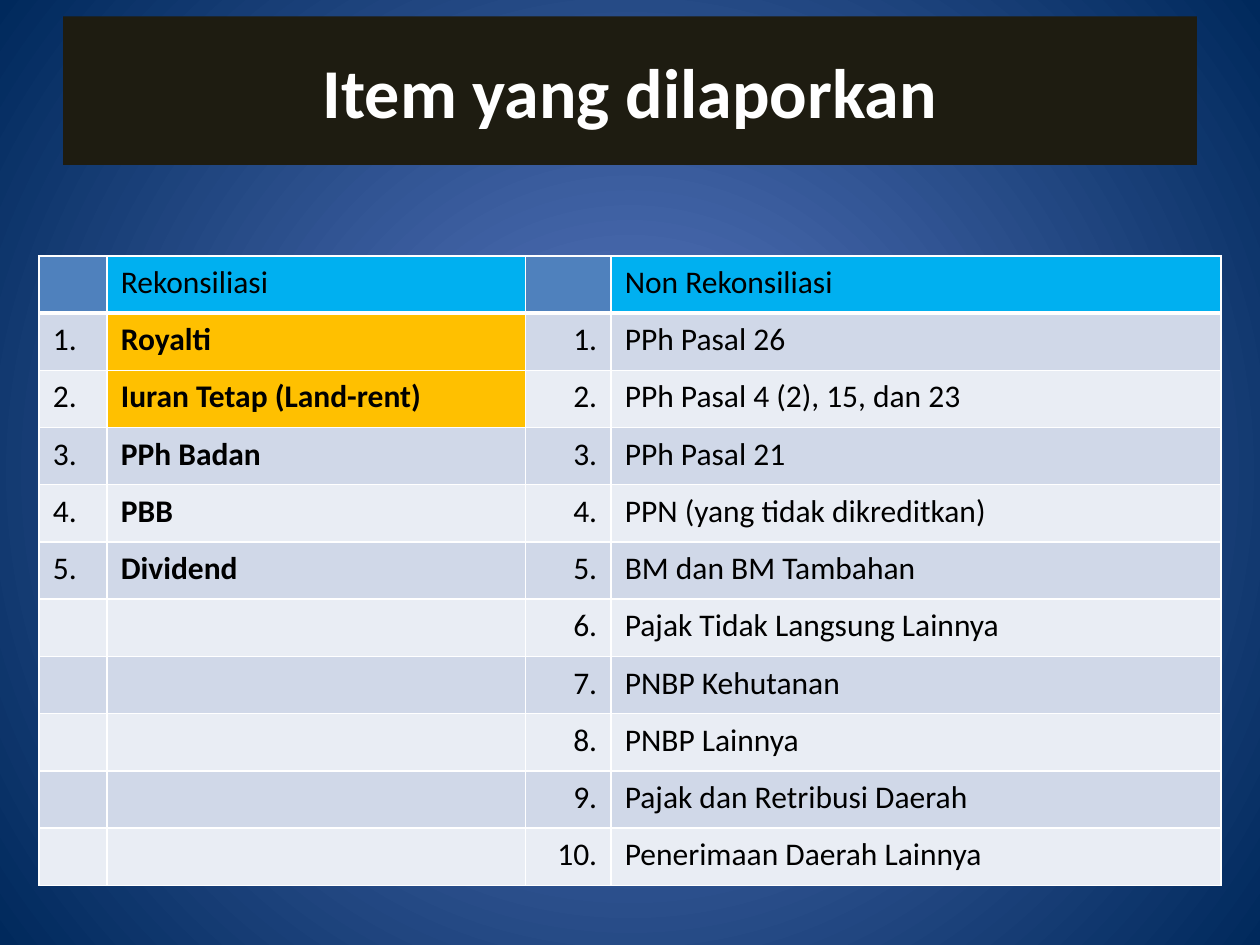
"""Build a slide that lists reconciled and unreconciled report items."""
import pptx
import pptx.dml.color
import pptx.enum.text
import pptx.oxml
import pptx.oxml.ns
import pptx.util
from pptx.util import Inches

RGBColor = pptx.dml.color.RGBColor
ALIGN = pptx.enum.text.PP_ALIGN
WHITE = RGBColor(0xFF, 0xFF, 0xFF)
BLACK = RGBColor(0x00, 0x00, 0x00)
DARK = RGBColor(0x1E, 0x1C, 0x11)
GLOW = RGBColor(0x5E, 0x7C, 0xC5)
NAVY = RGBColor(0x00, 0x29, 0x5C)
BLUE = RGBColor(0x4F, 0x81, 0xBD)
CYAN = RGBColor(0x00, 0xB0, 0xF0)
GOLD = RGBColor(0xFF, 0xC0, 0x00)
BANDS = [RGBColor(0xE9, 0xED, 0xF4), RGBColor(0xD0, 0xD8, 0xE8)]
NS = pptx.oxml.ns.nsdecls("a")

LEFT = ["Royalti", "Iuran Tetap (Land-rent)", "PPh Badan", "PBB", "Dividend"]
RIGHT = [
    "PPh Pasal 26",
    "PPh Pasal 4 (2), 15, dan 23",
    "PPh Pasal 21",
    "PPN (yang tidak dikreditkan)",
    "BM dan BM Tambahan",
    "Pajak Tidak Langsung Lainnya",
    "PNBP Kehutanan",
    "PNBP Lainnya",
    "Pajak dan Retribusi Daerah",
    "Penerimaan Daerah Lainnya",
]


def add_run(par, text, size, color, bold):
    run = par.add_run()
    run.text = text
    run.font.name = "Calibri"
    run.font.size = pptx.util.Pt(size)
    run.font.bold = bold
    run.font.color.rgb = color


def add_edge(cell, side, width):
    cell._tc.get_or_add_tcPr().append(pptx.oxml.parse_xml(
        f'<a:ln{side} {NS} w="{pptx.util.Pt(width)}"><a:solidFill>'
        f'<a:srgbClr val="{WHITE}"/></a:solidFill></a:ln{side}>'))


deck = pptx.Presentation()
deck.slide_width = Inches(10)
deck.slide_height = Inches(7.5)
slide = deck.slides.add_slide(deck.slide_layouts[5])

back = slide.background.fill
back.gradient()
for stop, color in zip(back.gradient_stops, [GLOW, NAVY]):
    stop.color.rgb = color
grad = slide.element.xpath(".//p:bg//a:gradFill")[0]
for line in grad.xpath("a:lin"):
    grad.replace(line, pptx.oxml.parse_xml(
        f'<a:path {NS} path="circle">'
        '<a:fillToRect l="50000" t="50000" r="50000" b="50000"/></a:path>'))

title = slide.shapes.title
title.left, title.top = Inches(0.5), Inches(0.13)
title.width, title.height = Inches(9), Inches(1.18)
title.fill.solid()
title.fill.fore_color.rgb = DARK
title.text_frame.vertical_anchor = pptx.enum.text.MSO_ANCHOR.MIDDLE
head = title.text_frame.paragraphs[0]
head.alignment = ALIGN.CENTER
add_run(head, "Item yang dilaporkan", 40, WHITE, True)

rows = [["", "Rekonsiliasi", "", "Non Rekonsiliasi"]]
for num, item in enumerate(RIGHT, 1):
    pair = [f"{num}.", LEFT[num - 1]] if num <= len(LEFT) else ["", ""]
    rows.append(pair + [f"{num}.", item])

table = slide.shapes.add_table(
    len(rows), 4, Inches(0.31), Inches(2.03), Inches(9.38), Inches(5)).table
table.first_row = False
table.horz_banding = False
for col, width in zip(table.columns, [0.54, 3.32, 0.68, 4.84]):
    col.width = Inches(width)

for r, row in enumerate(rows):
    for c, text in enumerate(row):
        cell = table.cell(r, c)
        cell.margin_left = cell.margin_right = Inches(0.11)
        cell.margin_top = cell.margin_bottom = Inches(0.06)
        for side in "LRTB":
            add_edge(cell, side, 3 if r == 0 and side == "B" else 1)
        if r == 0:
            color = CYAN if text else BLUE
        else:
            color = GOLD if c == 1 and r <= 2 else BANDS[r % 2]
        cell.fill.solid()
        cell.fill.fore_color.rgb = color
        par = cell.text_frame.paragraphs[0]
        if c == 2:
            par.alignment = ALIGN.RIGHT
        if text:
            add_run(par, text, 18, BLACK, c == 1 and r > 0)

deck.save("out.pptx")
